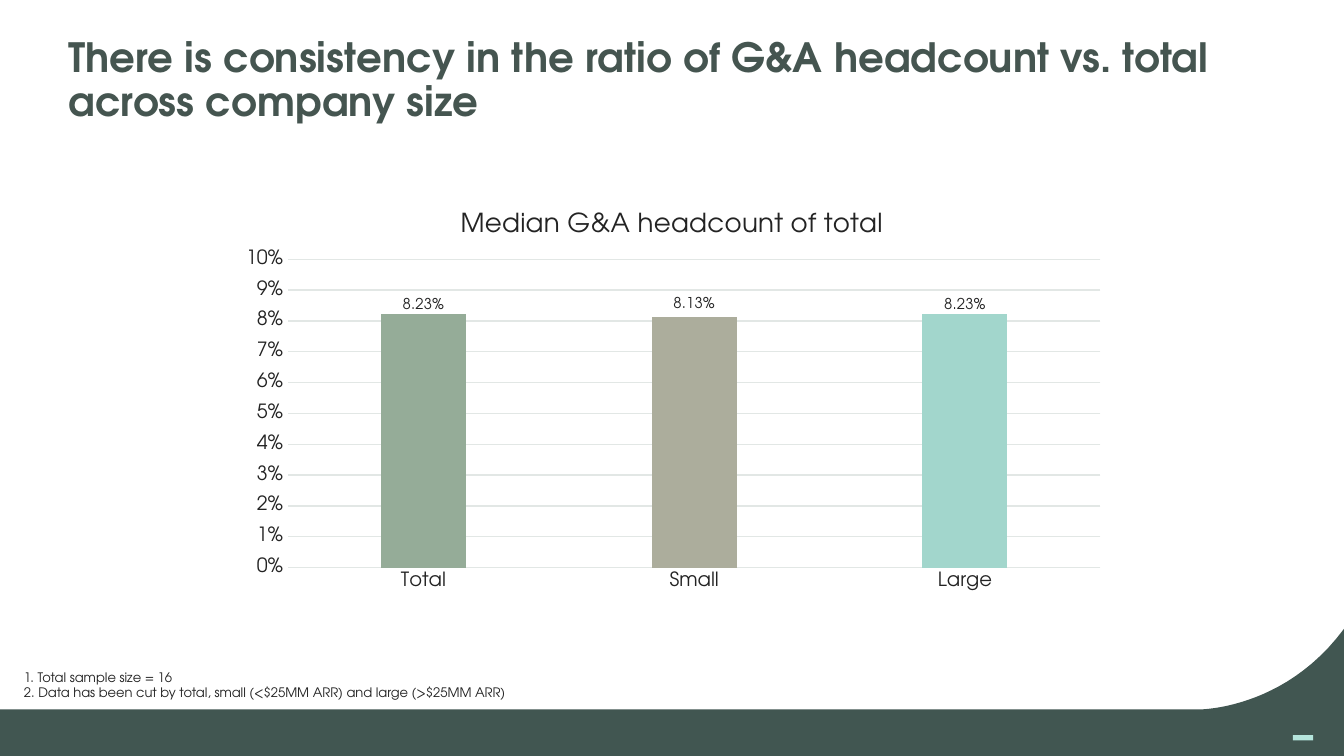
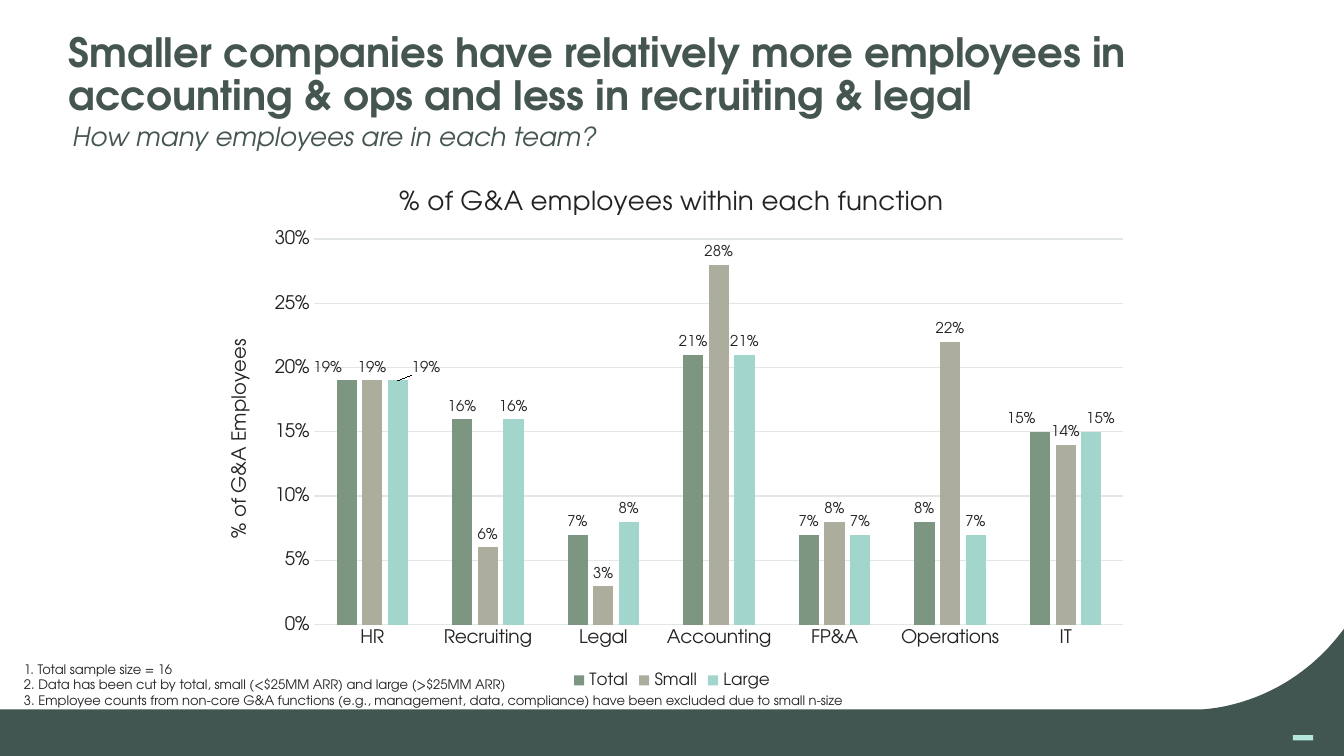
"""Build two slides comparing G&A headcount across company sizes."""
from lxml.etree import SubElement
from pptx import Presentation
from pptx.chart.data import CategoryChartData
from pptx.dml.color import RGBColor
from pptx.enum.chart import XL_CHART_TYPE as ChartType
from pptx.enum.chart import XL_LABEL_POSITION as LabelPosition
from pptx.enum.chart import XL_LEGEND_POSITION as LegendPosition
from pptx.enum.chart import XL_TICK_MARK as TickMark
from pptx.enum.shapes import MSO_SHAPE as Shape
from pptx.enum.text import MSO_ANCHOR as Anchor
from pptx.oxml.ns import qn
from pptx.util import Inches, Pt

FONT = "TeX Gyre Adventor"
BAND, ACCENT, HEADING = "415651", "B5E5DC", "455550"
INK, NOTE_INK, GRID = "232323", "222222", "E2E7E5"
SAND, AQUA = "ACAD9C", "A2D6CC"
NOTES = ["1. Total sample size = 16",
         "2. Data has been cut by total, small (<$25MM ARR) and large (>$25MM ARR)"]

SLIDES = [
    dict(
        title="There is consistency in the ratio of G&A headcount vs. total across company size",
        title_bottom=0.95, subtitle=None, notes=NOTES, notes_area=(0.08, 4.93, 7, 0.34),
        chart_title="Median G&A headcount of total", area=(1.68, 1.41, 6.64, 3.06),
        plot=(0.07, 0.17, 0.91, 0.75), axis_size=10.5, axis_title=None,
        top=0.1, step=0.01, label_format="0.00%",
        categories=["Total", "Small", "Large"],
        series=[("Series 1", "95AC98", [0.0823, 0.0813, 0.0823])],
        point_colors=["95AC98", SAND, AQUA],
        label_shifts={(0, 0): (0, 0.01), (0, 2): (0, 0.01)},
    ),
    dict(
        title="Smaller companies have relatively more employees in accounting & ops "
              "and less in recruiting & legal",
        title_bottom=0.91, subtitle="How many employees are in each team?",
        notes=NOTES + ["3. Employee counts from non-core G&A functions (e.g., management, data, "
                       "compliance) have been excluded due to small n-size"],
        notes_area=(0.08, 4.87, 9.08, 0.45),
        chart_title="% of G&A employees within each function", area=(1.5, 1.23, 7, 3.93),
        plot=(0.12, 0.14, 0.86, 0.73), axis_size=10, axis_title="% of G&A Employees",
        top=0.3, step=0.05, label_format="0%",
        categories=["HR", "Recruiting", "Legal", "Accounting", "FP&A", "Operations", "IT"],
        series=[("Total", "7C9682", [0.19, 0.16, 0.07, 0.21, 0.07, 0.08, 0.15]),
                ("Small", SAND, [0.19, 0.06, 0.03, 0.28, 0.08, 0.22, 0.14]),
                ("Large", AQUA, [0.19, 0.16, 0.08, 0.21, 0.07, 0.07, 0.15])],
        point_colors=[],
        label_shifts={(0, 0): (-0.02, 0), (0, 6): (-0.02, 0),
                      (2, 0): (0.03, 0), (2, 6): (0.01, 0)},
    ),
]


def paint(fill, color):
    fill.solid()
    fill.fore_color.rgb = RGBColor.from_string(color)


def write(frame, text, size=10, color=INK, bold=False, italic=False, spacing=None):
    for index, line in enumerate(text.split("\n")):
        para = frame.add_paragraph() if index else frame.paragraphs[0]
        if spacing:
            para.line_spacing = spacing
        span = para.add_run()
        span.text = line
        span.font.name, span.font.size = FONT, Pt(size)
        span.font.bold, span.font.italic = bold, italic
        paint(span.font.fill, color)


deck = Presentation()
deck.slide_width, deck.slide_height = Inches(10), Inches(5.625)

curve = []
for step in range(25):
    t = step / 24
    weights = ((1 - t) ** 3, 3 * t * (1 - t) ** 2, 3 * t ** 2 * (1 - t), t ** 3)
    curve.append(tuple(Inches(sum(w * c for w, c in zip(weights, controls)))
                       for controls in ((8.91, 8.91, 9.55, 10), (5.28, 5.28, 5.29, 4.68))))

for content in SLIDES:
    page = deck.slides.add_slide(deck.slide_layouts[6])

    outline = page.shapes.build_freeform(deck.slide_width, deck.slide_height)
    outline.add_line_segments([(0, deck.slide_height), (0, Inches(5.28))] + curve)
    band = outline.convert_to_shape()
    mark = page.shapes.add_shape(Shape.RECTANGLE, Inches(9.62), Inches(5.47),
                                 Inches(0.15), Inches(0.04))
    for shape, color in ((band, BAND), (mark, ACCENT)):
        shape.shadow.inherit = False
        shape.line.fill.background()
        paint(shape.fill, color)

    texts = [((0.46, content["title_bottom"] - 0.76, 9.08, 0.76), content["title"],
              dict(size=21.6, color=HEADING, bold=True, spacing=0.9))]
    if content["subtitle"]:
        texts.append(((0.44, 0.85, 5, 0.34), content["subtitle"],
                      dict(size=14, color=HEADING, italic=True)))
    texts.append((content["notes_area"], "\n".join(content["notes"]),
                  dict(size=7, color=NOTE_INK)))
    for area, text, style in texts:
        box = page.shapes.add_textbox(*map(Inches, area))
        frame = box.text_frame
        frame.word_wrap = True
        if text == content["title"]:
            frame.vertical_anchor = Anchor.BOTTOM
            frame.margin_left = frame.margin_right = Inches(0.05)
            frame.margin_top = frame.margin_bottom = Inches(0.02)
        write(frame, text, **style)

    data = CategoryChartData(number_format=content["label_format"])
    data.categories = content["categories"]
    for name, color, values in content["series"]:
        data.add_series(name, values)
    chart = page.shapes.add_chart(ChartType.COLUMN_CLUSTERED,
                                  *map(Inches, content["area"]), data).chart
    chart.has_title = True
    write(chart.chart_title.text_frame, content["chart_title"], size=14)
    chart.chart_title.include_in_layout = False
    chart.has_legend = len(content["series"]) > 1

    category_axis, value_axis = chart.category_axis, chart.value_axis
    value_axis.minimum_scale, value_axis.maximum_scale = 0, content["top"]
    value_axis.major_unit = content["step"]
    value_axis.tick_labels.number_format = "0%"
    value_axis.tick_labels.number_format_is_linked = False
    value_axis.has_major_gridlines = True
    value_axis.format.line.fill.background()
    for line in (category_axis.format.line, value_axis.major_gridlines.format.line):
        paint(line.fill, GRID)
        line.width = Pt(0.75)
    fonts = [(chart.font, 10)]
    for axis in (category_axis, value_axis):
        axis.major_tick_mark = axis.minor_tick_mark = TickMark.NONE
        fonts.append((axis.tick_labels.font, content["axis_size"]))
    if content["axis_title"]:
        frame = value_axis.axis_title.text_frame
        write(frame, content["axis_title"], size=10.5)
        frame._txBody.bodyPr.set("rot", "-5400000")
        frame._txBody.bodyPr.set("vert", "horz")
    if chart.has_legend:
        chart.legend.position = LegendPosition.BOTTOM
        chart.legend.include_in_layout = False
        fonts.append((chart.legend.font, 9))

    plot = chart.plots[0]
    plot.gap_width, plot.overlap, plot.vary_by_categories = 219, -27, False
    layouts = []
    for index, (series, (name, color, values)) in enumerate(zip(plot.series, content["series"])):
        paint(series.format.fill, color)
        for number, point_color in enumerate(content["point_colors"]):
            paint(series.points[number].format.fill, point_color)
        labels = series.data_labels
        labels.show_value, labels.position = True, LabelPosition.OUTSIDE_END
        labels.number_format = content["label_format"]
        labels.number_format_is_linked = False
        fonts.append((labels.font, 8))
        for (owner, number), shift in content["label_shifts"].items():
            if owner == index:
                label = series.points[number].data_label
                label.position = LabelPosition.OUTSIDE_END
                fonts.append((label.font, 8))
                element = labels._element.xpath(f'c:dLbl[c:idx/@val="{number}"]')[0]
                layouts.append((element, 1, dict(zip("xy", shift))))
    for font, size in fonts:
        font.name, font.size, font.bold = FONT, Pt(size), False
        paint(font.fill, INK)

    plot_area = chart._chartSpace.chart.plotArea
    for old_layout in plot_area.findall(qn("c:layout")):
        plot_area.remove(old_layout)
    frame_values = dict(layoutTarget="inner", xMode="edge", yMode="edge")
    frame_values.update(zip("xywh", content["plot"]))
    layouts.append((plot_area, 0, frame_values))
    for parent, position, values in layouts:
        layout = SubElement(parent, qn("c:layout"))
        manual = SubElement(layout, qn("c:manualLayout"))
        for tag, value in values.items():
            SubElement(manual, qn(f"c:{tag}")).set("val", str(value))
        parent.insert(position, layout)

deck.save("out.pptx")
